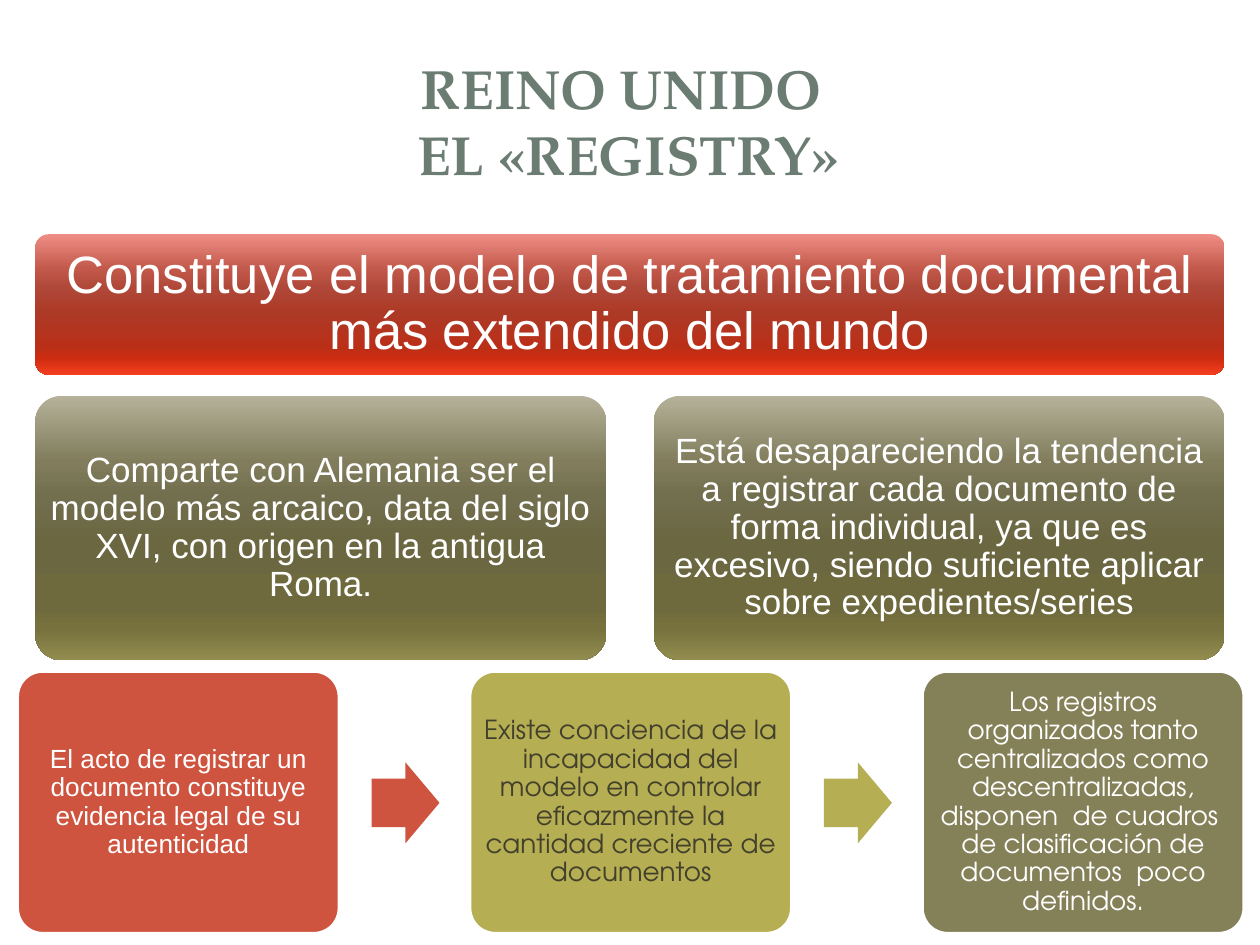
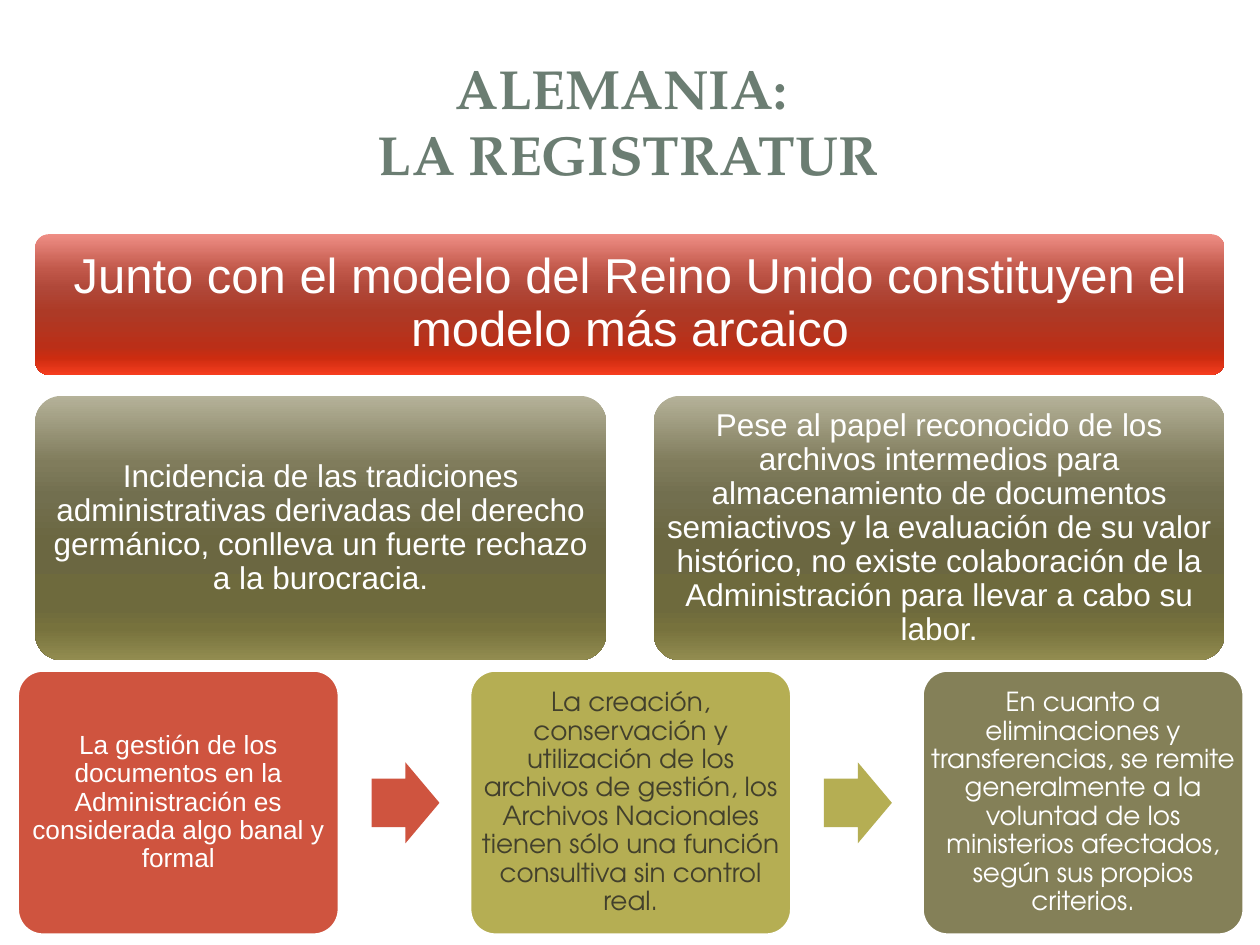
from lxml.etree import SubElement
from pptx import Presentation
from pptx.dml.color import RGBColor
from pptx.enum.shapes import MSO_SHAPE
from pptx.enum.text import MSO_ANCHOR, PP_ALIGN
from pptx.oxml.ns import qn
from pptx.util import Cm, Pt

COLORS = {
    "white": "FFFFFF",
    "title": "6B7D72",
    "dark": "42402C",
    "red": "CF543F",
    "lime": "B5AE53",
    "olive": "848058",
}
STOPS = [0, 25, 38, 55, 80, 88, 100]
GLOSS = {
    "red": ["EF8E85", "C1584A", "B04839", "AD3A26", "BA2F18", "CD2C10", "F63D1F"],
    "olive": ["B5B299", "807C5C", "726F4F", "6B6741", "6E6A3D", "77723D", "928C50"],
}
SANS, ROUND, SERIF = "Arial", "TeX Gyre Adventor", "TeX Gyre Pagella"

# Fill, text colour and font of the three steps
STEPS = [("red", "white", SANS), ("lime", "dark", ROUND), ("olive", "white", ROUND)]

SLIDES = [
    {
        "title": "REINO UNIDO \vEL «REGISTRY»",
        "banner": "Constituye el modelo de tratamiento documental más extendido del mundo",
        "cards": [
            "Comparte con Alemania ser el modelo más arcaico, data del siglo XVI, "
            "con origen en la antigua Roma.",
            "Está desapareciendo la tendencia a registrar cada documento de forma "
            "individual, ya que es excesivo, siendo suficiente aplicar sobre "
            "expedientes/series",
        ],
        "steps": [
            "El acto de registrar un documento constituye evidencia legal de su "
            "autenticidad",
            "Existe conciencia de la incapacidad del modelo en controlar eficazmente "
            "la cantidad creciente de documentos",
            "Los registros organizados tanto centralizados como descentralizadas, "
            "disponen  de cuadros  de clasificación de documentos  poco definidos.",
        ],
        "sizes": (30, 20),
        "row": (13.51, 5.33),
    },
    {
        "title": "ALEMANIA: \vLA REGISTRATUR",
        "banner": "Junto con el modelo del Reino Unido constituyen el modelo más arcaico",
        "cards": [
            "Incidencia de las tradiciones administrativas derivadas del derecho "
            "germánico, conlleva un fuerte rechazo a la burocracia.",
            "Pese al papel reconocido de los archivos intermedios para almacenamiento "
            "de documentos semiactivos y la evaluación de su valor histórico, no existe "
            "colaboración de la Administración para llevar a cabo su labor.",
        ],
        "steps": [
            "La gestión de los documentos en la Administración es considerada algo "
            "banal y formal",
            "La creación, conservación y utilización de los archivos de gestión, los "
            "Archivos Nacionales tienen sólo una función consultiva sin control real.",
            "En cuanto a eliminaciones y transferencias, se remite generalmente a la "
            "voluntad de los ministerios afectados, según sus propios criterios.",
        ],
        "sizes": (28, 18),
        "row": (13.49, 5.38),
    },
]


class Deck:
    def __init__(self):
        self.prs = Presentation()
        self.prs.slide_width, self.prs.slide_height = Cm(25.4), Cm(19.05)
        self.slide = None

    def start(self):
        self.slide = self.prs.slides.add_slide(self.prs.slide_layouts[6])

    def color(self, name):
        return RGBColor.from_string(COLORS[name])

    def label(self, shape, text, size, color="white", font=SANS, pad=0.0, space=0.9,
              bold=False):
        frame = shape.text_frame
        frame.word_wrap = True
        frame.vertical_anchor = MSO_ANCHOR.MIDDLE
        frame.margin_left = frame.margin_right = Cm(pad)
        frame.margin_top = frame.margin_bottom = Cm(pad)
        frame.text = text
        para = frame.paragraphs[0]
        para.alignment = PP_ALIGN.CENTER
        para.line_spacing = space
        for run in para.runs:
            run.font.name, run.font.size, run.font.bold = font, Pt(size), bold
            run.font.color.rgb = self.color(color)

    def shape(self, kind, box, fill):
        shape = self.slide.shapes.add_shape(kind, *map(Cm, box))
        shape.shadow.inherit = False
        shape.fill.solid()
        shape.fill.fore_color.rgb = self.color(fill)
        shape.line.fill.background()
        return shape

    def title(self, text):
        box = self.slide.shapes.add_textbox(Cm(1.19), Cm(1.14), Cm(22.94), Cm(2.59))
        self.label(box, text, 31.5, "title", SERIF, space=1.0, bold=True)

    def panel(self, box, fill):
        shape = self.shape(MSO_SHAPE.ROUNDED_RECTANGLE, box, fill)
        shape.adjustments[0] = 0.1
        return shape

    def gloss(self, box, tone, text, size, pad):
        shape = self.panel(box, tone)
        shape.fill.gradient()
        shape.fill.gradient_angle = 270
        stops = shape._element.spPr.find(qn("a:gradFill")).find(qn("a:gsLst"))
        stops.clear()
        for pos, value in zip(STOPS, GLOSS[tone]):
            stop = SubElement(stops, qn("a:gs"), pos=str(pos * 1000))
            SubElement(stop, qn("a:srgbClr"), val=value)
        self.label(shape, text, size, pad=pad)

    def step(self, box, text, fill, ink, font):
        shape = self.panel(box, fill)
        shape.line.color.rgb = self.color("white")
        shape.line.width = Pt(3)
        self.label(shape, text, 15, ink, font)

    def arrow(self, left, fill):
        shape = self.shape(MSO_SHAPE.RIGHT_ARROW, (left, 15.37, 1.37, 1.63), fill)
        shape.adjustments[0], shape.adjustments[1] = 0.6, 0.5


def main():
    deck = Deck()
    for data in SLIDES:
        deck.start()
        deck.title(data["title"])

        # Banner and the two cards below it
        large, small = data["sizes"]
        deck.gloss((0.71, 4.72, 23.98, 2.84), "red", data["banner"], large, 0.22)
        for i, text in enumerate(data["cards"]):
            deck.gloss((0.71 + i * 12.47, 7.98, 11.51, 5.33), "olive", text, small, 0.04)

        # Three steps, with an arrow after each but the last
        top, high = data["row"]
        for i, (text, style) in enumerate(zip(data["steps"], STEPS)):
            left = 0.33 + i * 9.12
            deck.step((left, top, 6.53, high), text, *style)
            if i < len(STEPS) - 1:
                deck.arrow(left + 7.16, style[0])
    deck.prs.save("out.pptx")


if __name__ == "__main__":
    main()
